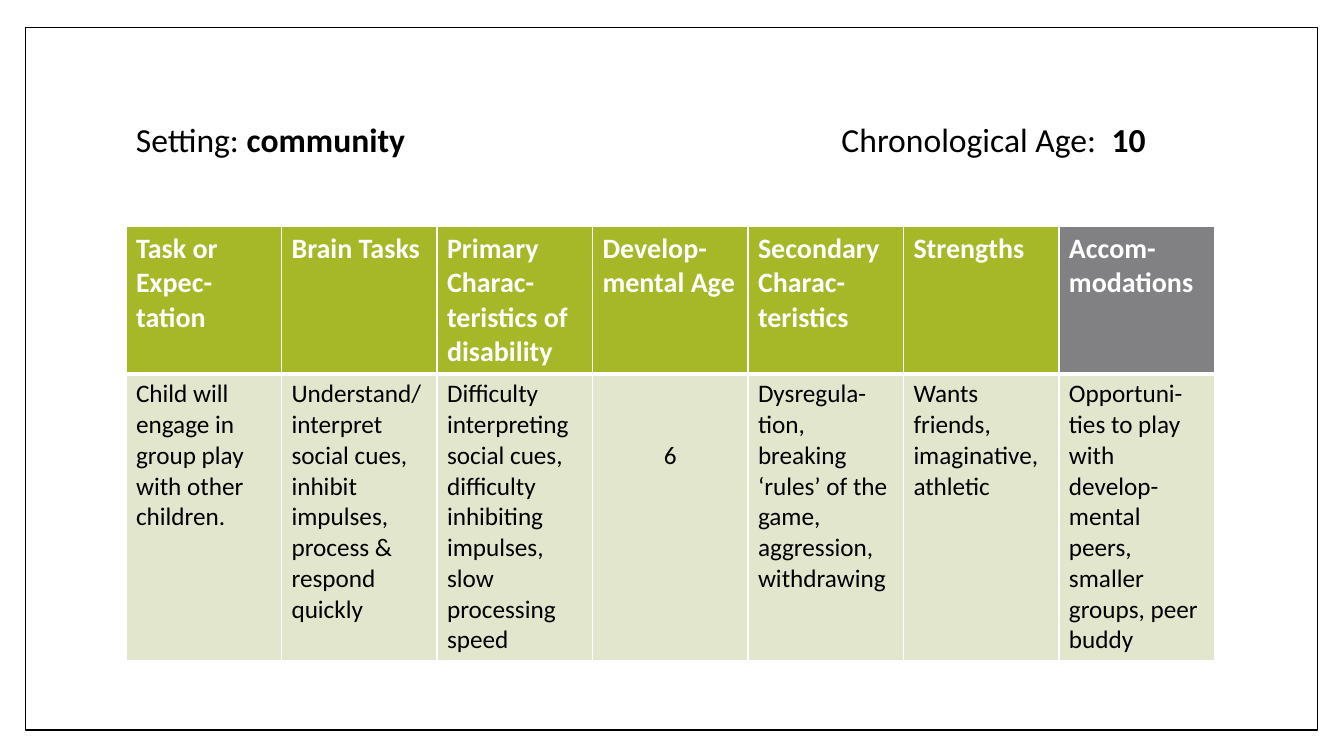
from lxml import etree
from pptx import Presentation
from pptx import util as u
from pptx.dml.color import RGBColor
from pptx.enum import shapes, text
from pptx.oxml import ns

COLORS = {
    "black": "000000",
    "white": "FFFFFF",
    "green": "A6B727",
    "gray": "818183",
    "pale": "E1E6CD",
}

COLUMNS = [
    ("Task or Expec-tation",
     "Child will engage in group play with other children."),
    ("Brain Tasks",
     "Understand/interpret social cues,\ninhibit impulses, process & respond quickly"),
    ("Primary Charac-teristics of disability",
     "Difficulty interpreting social cues, difficulty inhibiting impulses, slow processing speed"),
    ("Develop-mental Age", "6"),
    ("Secondary Charac-teristics",
     "Dysregula-tion, breaking ‘rules’ of the game, aggression, withdrawing"),
    ("Strengths", "Wants friends, imaginative, athletic"),
    ("Accom-modations",
     "Opportuni-ties to play with develop-mental peers, smaller groups, peer buddy"),
]
AGE_COLUMN = 3
ACCOMMODATIONS_COLUMN = 6


def color(name):
    return RGBColor.from_string(COLORS[name])


def add_run(paragraph, words, *, font, size, fill="black", bold=False):
    run = paragraph.add_run()
    run.text = words
    run.font.name = font
    run.font.size = u.Pt(size)
    run.font.bold = bold
    run.font.color.rgb = color(fill)


class SlideBuilder:
    font = "Calibri"

    def __init__(self, slide):
        self.slide = slide

    def frame(self, left, top, width, height):
        shape = self.slide.shapes.add_shape(
            shapes.MSO_SHAPE.RECTANGLE, u.Pt(left), u.Pt(top), u.Pt(width), u.Pt(height))
        shape.shadow.inherit = False
        shape.fill.solid()
        shape.fill.fore_color.rgb = color("white")
        shape.line.color.rgb = color("black")
        shape.line.width = u.Pt(1)

    def heading(self, left, top, width, height, runs, tabs):
        box = self.slide.shapes.add_textbox(u.Pt(left), u.Pt(top), u.Pt(width), u.Pt(height))
        box.text_frame.word_wrap = True
        box.text_frame.vertical_anchor = text.MSO_ANCHOR.MIDDLE
        paragraph = box.text_frame.paragraphs[0]
        paragraph.line_spacing = 0.9
        tab_list = etree.SubElement(paragraph._p.get_or_add_pPr(), ns.qn("a:tabLst"))
        for position in tabs:
            etree.SubElement(tab_list, ns.qn("a:tab"), pos=str(u.Pt(position)), algn="l")
        for words, bold in runs:
            add_run(paragraph, words, font=self.font, size=24, bold=bold)

    def borders(self, cell, **widths):
        properties = cell._tc.get_or_add_tcPr()
        for side in "LRTB":
            width = str(u.Pt(widths.get(side, 1)))
            line = etree.SubElement(properties, ns.qn(f"a:ln{side}"), w=width)
            fill = etree.SubElement(line, ns.qn("a:solidFill"))
            etree.SubElement(fill, ns.qn("a:srgbClr"), val=COLORS["white"])

    def cell(self, cell, words, background, align=text.PP_ALIGN.LEFT, **style):
        cell.fill.solid()
        cell.fill.fore_color.rgb = color(background)
        for index, line in enumerate(words.split("\n")):
            frame = cell.text_frame
            paragraph = frame.add_paragraph() if index else frame.paragraphs[0]
            paragraph.alignment = align
            add_run(paragraph, line, font=self.font, **style)

    def table(self, left, top, width, row_heights, columns):
        table = self.slide.shapes.add_table(
            len(row_heights), len(columns), u.Pt(left), u.Pt(top),
            u.Pt(width), u.Pt(sum(row_heights))).table
        table.horz_banding = False
        for row, height in zip(table.rows, row_heights):
            row.height = u.Pt(height)
        for index, (title, body) in enumerate(columns):
            table.columns[index].width = u.Pt(width / len(columns))
            header_cell, body_cell = table.cell(0, index), table.cell(1, index)
            self.borders(header_cell, B=3)
            self.borders(body_cell, T=3)
            background = "gray" if index == ACCOMMODATIONS_COLUMN else "green"
            self.cell(header_cell, title, background, size=20, fill="white", bold=True)
            align = text.PP_ALIGN.LEFT
            if index == AGE_COLUMN:
                align = text.PP_ALIGN.CENTER
                body_cell.margin_top = u.Pt(47.6)
            self.cell(body_cell, body, "pale", align, size=18)


def main():
    presentation = Presentation()
    presentation.slide_width = u.Pt(960)
    presentation.slide_height = u.Pt(540)
    builder = SlideBuilder(presentation.slides.add_slide(presentation.slide_layouts[6]))
    builder.frame(18, 19.5, 923, 502)
    builder.heading(
        90, 48, 777.6, 106.5,
        [("Setting: ", False), ("community", True),
         ("\tChronological Age:\t", False), ("10", True)],
        tabs=(504, 697))
    builder.table(90, 162, 777.6, (105, 205), COLUMNS)
    presentation.save("out.pptx")


if __name__ == "__main__":
    main()
